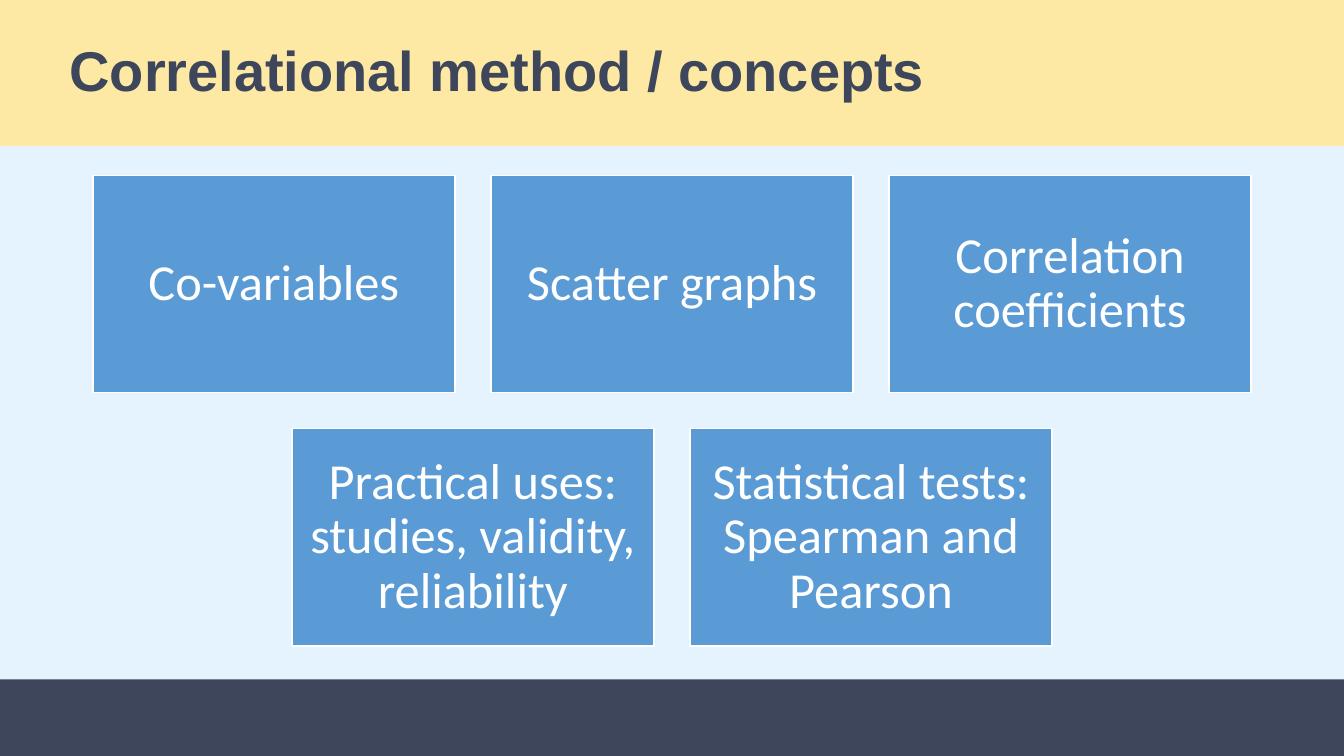
"""Build the slide on concepts of the correlational method."""
from pptx import Presentation
from pptx.dml.color import RGBColor
from pptx.enum.shapes import MSO_SHAPE
from pptx.enum.text import MSO_ANCHOR, PP_ALIGN
from pptx.util import Pt

RECTANGLE = MSO_SHAPE.RECTANGLE
MIDDLE = MSO_ANCHOR.MIDDLE
LEFT, CENTER = PP_ALIGN.LEFT, PP_ALIGN.CENTER

COLORS = {"sky": "E5F3FF", "navy": "3D465A", "sand": "FEE9A4",
          "blue": "5B9BD5", "white": "FFFFFF"}
PAGE_WIDTH, PAGE_HEIGHT = 960, 540
TITLE_HEIGHT, FOOTER_TOP = 104.4, 485.3
CARD_WIDTH, CARD_HEIGHT, CARD_GAP = 258.6, 155.2, 25.8
CARDS_TOP = 125.2
CARD_ROWS = [
    ["Co-variables", "Scatter graphs", "Correlation coefficients"],
    ["Practical uses: studies, validity, reliability",
     "Statistical tests: Spearman and Pearson"],
]


class SlideBuilder:
    """Hold the colours and the page, and draw its elements."""

    def __init__(self, page, colors):
        self.page = page
        self.colors = {name: RGBColor.from_string(value)
                       for name, value in colors.items()}

    def background(self, color):
        """Fill the page background."""
        fill = self.page.background.fill
        fill.solid()
        fill.fore_color.rgb = self.colors[color]

    def box(self, left, top, width, height, color, outline=None):
        """Draw a filled rectangle."""
        box = self.page.shapes.add_shape(
            RECTANGLE, Pt(left), Pt(top), Pt(width), Pt(height))
        box.shadow.inherit = False
        box.fill.solid()
        box.fill.fore_color.rgb = self.colors[color]
        if outline:
            box.line.color.rgb = self.colors[outline]
            box.line.width = Pt(1)
        else:
            box.line.fill.background()
        return box

    def label(self, box, text, font, size, color, align, inset, bold=False):
        """Put one styled paragraph in a box."""
        frame = box.text_frame
        frame.word_wrap = True
        frame.vertical_anchor = MIDDLE
        frame.margin_left = Pt(inset)
        frame.margin_right = Pt(10.8)
        para = frame.paragraphs[0]
        para.text = text
        para.alignment = align
        para.line_spacing = 0.9
        para.font.name = font
        para.font.size = Pt(size)
        para.font.bold = bold
        para.font.color.rgb = self.colors[color]

    def title(self, text):
        """Draw the title band."""
        band = self.box(0, 0, PAGE_WIDTH, TITLE_HEIGHT, "sand")
        self.label(band, text, "Arial", 40, "navy", LEFT, 49.7, bold=True)

    def card_row(self, texts, top):
        """Draw a centred row of cards."""
        pitch = CARD_WIDTH + CARD_GAP
        start = (PAGE_WIDTH - len(texts) * pitch + CARD_GAP) / 2
        for column, text in enumerate(texts):
            card = self.box(start + column * pitch, top,
                            CARD_WIDTH, CARD_HEIGHT, "blue", "white")
            self.label(card, text, "Calibri", 36, "white", CENTER, 10.8)


def main():
    """Build and save the deck."""
    deck = Presentation()
    deck.slide_width, deck.slide_height = Pt(PAGE_WIDTH), Pt(PAGE_HEIGHT)
    builder = SlideBuilder(deck.slides.add_slide(deck.slide_layouts[6]), COLORS)
    builder.background("sky")
    builder.box(0, FOOTER_TOP, PAGE_WIDTH, PAGE_HEIGHT - FOOTER_TOP, "navy")
    builder.title("Correlational method / concepts")
    for row, texts in enumerate(CARD_ROWS):
        builder.card_row(texts, CARDS_TOP + row * (CARD_HEIGHT + CARD_GAP))
    deck.save("out.pptx")


if __name__ == "__main__":
    main()
